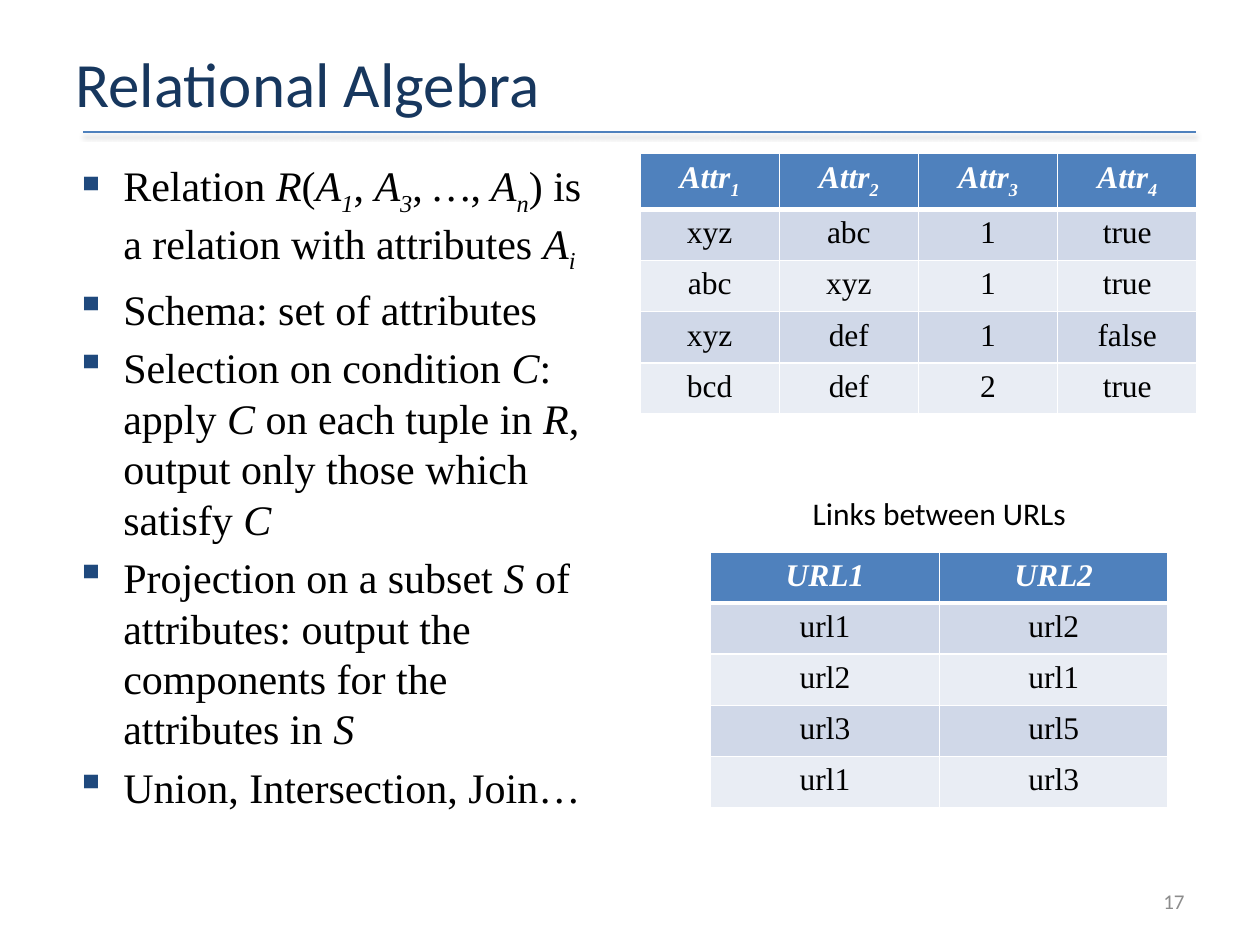
from lxml import etree
from pptx import Presentation
from pptx import util as u
from pptx.dml.color import RGBColor
from pptx.enum import shapes, text
from pptx.oxml import parse_xml
from pptx.oxml.ns import nsdecls, qn

SERIF = "Times New Roman"
SANS = "Calibri"
LEFT, CENTER, RIGHT = text.PP_ALIGN.LEFT, text.PP_ALIGN.CENTER, text.PP_ALIGN.RIGHT

POINTS = [
    "Relation *R*(*A_1*, *A_3*,* …*,* A_n*) is a relation with attributes *A_i*",
    "Schema: set of attributes",
    "Selection on condition *C*: apply *C *on each tuple in *R*, "
    "output only those which satisfy *C*",
    "Projection on a subset *S *of attributes: output the components "
    "for the attributes in *S*",
    "Union, Intersection, Join…",
]
RELATION = [
    ["*Attr_1*", "*Attr_2*", "*Attr_3*", "*Attr_4*"],
    ["xyz", "abc", "1", "true"],
    ["abc", "xyz", "1", "true"],
    ["xyz", "def", "1", "false"],
    ["bcd", "def", "2", "true"],
]
LINKS = [
    ["*URL1*", "*URL2*"],
    ["url1", "url2"],
    ["url2", "url1"],
    ["url3", "url5"],
    ["url1", "url3"],
]


def color(value):
    return RGBColor.from_string(value)


def write(paragraph, content, size=18, font=SERIF, fill="000000", bold=False, align=LEFT):
    """Text between asterisks is italic; there, an underscore starts a subscript."""
    paragraph.alignment = align
    for index, part in enumerate(content.split("*")):
        italic = index % 2 == 1
        base, _, subscript = part.partition("_")
        for wording, lowered in ((base, False), (subscript, True)):
            if not wording:
                continue
            run = paragraph.add_run()
            run.text = wording
            run.font.size = u.Pt(size)
            run.font.name = font
            run.font.bold = bold
            run.font.italic = italic
            run.font.color.rgb = color(fill)
            if lowered:
                run.font._element.set("baseline", "-25000")


def add_frame(slide, left, top, width, height, anchor=text.MSO_ANCHOR.TOP):
    box = slide.shapes.add_textbox(*map(u.Inches, (left, top, width, height)))
    frame = box.text_frame
    frame.word_wrap = True
    frame.vertical_anchor = anchor
    return frame


def add_label(slide, content, left, top, width, height, anchor=text.MSO_ANCHOR.TOP, **style):
    frame = add_frame(slide, left, top, width, height, anchor)
    write(frame.paragraphs[0], content, **style)


def add_bullets(slide, points, left, top, width, height):
    frame = add_frame(slide, left, top, width, height)
    for index, point in enumerate(points):
        paragraph = frame.add_paragraph() if index else frame.paragraphs[0]
        write(paragraph, point, size=24)
        paragraph.space_before = u.Pt(4.8)
        properties = paragraph._p.get_or_add_pPr()
        indent = u.Inches(0.38)
        properties.set("marL", str(indent))
        properties.set("indent", str(-indent))
        bullet_color = etree.SubElement(properties, qn("a:buClr"))
        etree.SubElement(bullet_color, qn("a:srgbClr"), val="1F497D")
        etree.SubElement(properties, qn("a:buChar"), char="▪")


def add_rule(slide, left, right, top):
    rule = slide.shapes.add_connector(
        shapes.MSO_CONNECTOR.STRAIGHT, *map(u.Inches, (left, top, right, top)))
    rule.line.color.rgb = color("4F81BD")
    rule.line.width = u.Pt(1)
    rule._element.spPr.append(parse_xml(
        f'<a:effectLst {nsdecls("a")}><a:outerShdw blurRad="{u.Pt(3.1)}" '
        f'dist="{u.Pt(1.6)}" dir="5400000" rotWithShape="0"><a:srgbClr val="000000">'
        '<a:alpha val="38000"/></a:srgbClr></a:outerShdw></a:effectLst>'))


def set_borders(cell, top, bottom):
    properties = cell._tc.get_or_add_tcPr()
    for side, width in (("L", 1), ("R", 1), ("T", top), ("B", bottom)):
        properties.append(parse_xml(
            f'<a:ln{side} {nsdecls("a")} w="{u.Pt(width)}"><a:solidFill>'
            f'<a:srgbClr val="FFFFFF"/></a:solidFill></a:ln{side}>'))


def add_grid(slide, rows, left, top, width, height):
    table = slide.shapes.add_table(
        len(rows), len(rows[0]), *map(u.Inches, (left, top, width, height))).table
    for row, values in enumerate(rows):
        header = row == 0
        band = "4F81BD" if header else ("E9EDF4", "D0D8E8")[row % 2]
        for column, value in enumerate(values):
            cell = table.cell(row, column)
            set_borders(cell, top=3 if row == 1 else 1, bottom=3 if header else 1)
            cell.fill.solid()
            cell.fill.fore_color.rgb = color(band)
            write(cell.text_frame.paragraphs[0], value, bold=header,
                  fill="FFFFFF" if header else "000000", align=CENTER)


def main():
    deck = Presentation()
    deck.slide_width, deck.slide_height = u.Inches(10), u.Inches(7.5)
    slide = deck.slides.add_slide(deck.slide_layouts[6])
    middle = text.MSO_ANCHOR.MIDDLE

    add_rule(slide, 0.66, 9.49, 1.05)
    add_label(slide, "Relational Algebra", 0.5, 0.3, 9, 0.71, middle,
              size=36, font=SANS, fill="17375E")
    add_bullets(slide, POINTS, 0.5, 1.22, 4.42, 5.48)
    add_grid(slide, RELATION, 5.08, 1.22, 4.42, 2.03)
    add_label(slide, "17", 7.17, 6.95, 2.33, 0.4, middle,
              size=12, font=SANS, fill="8C8C8C", align=RIGHT)
    add_grid(slide, LINKS, 5.64, 4.38, 3.63, 2.03)
    add_label(slide, "Links between URLs", 5.64, 3.87, 3.63, 0.4,
              font=SANS, align=CENTER)
    deck.save("out.pptx")


if __name__ == "__main__":
    main()
